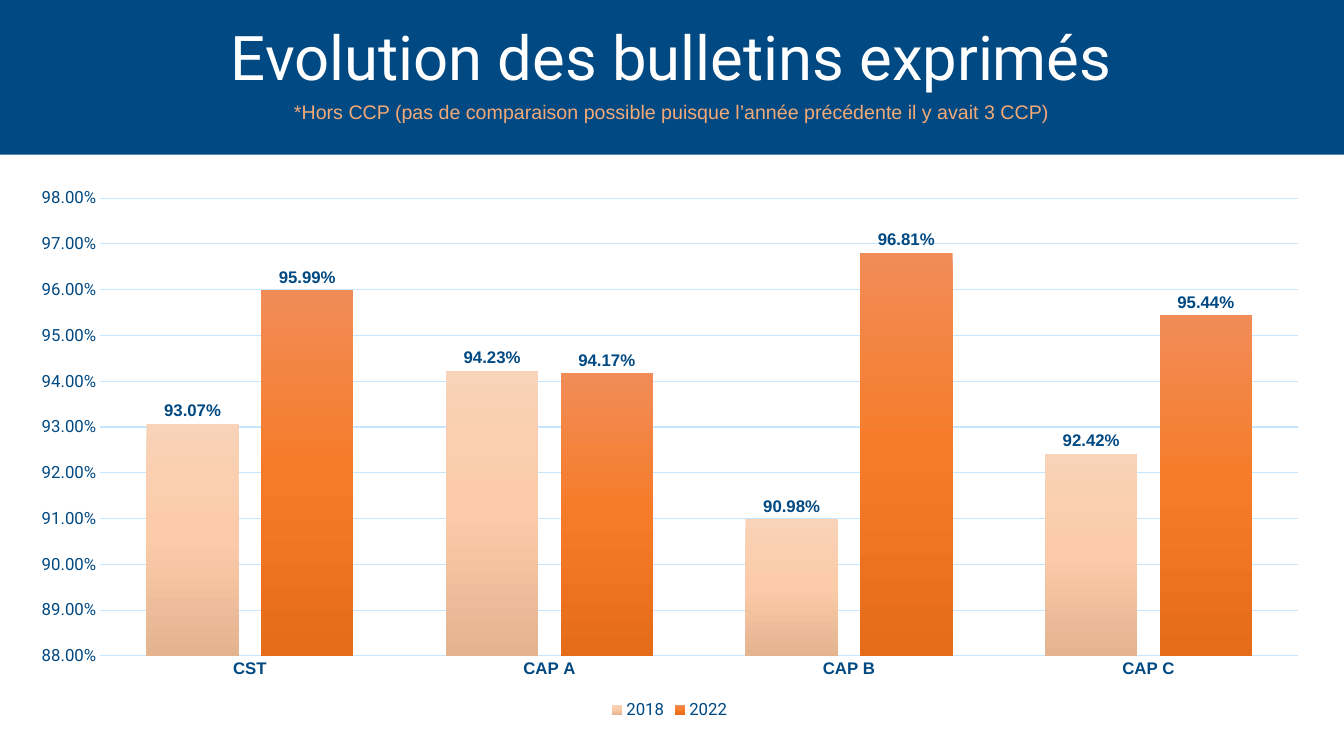
from copy import deepcopy

from lxml.etree import SubElement
from pptx import Presentation
from pptx.chart.data import CategoryChartData
from pptx.dml.color import RGBColor
from pptx.enum.chart import XL_CHART_TYPE, XL_LABEL_POSITION, XL_LEGEND_POSITION, XL_TICK_MARK
from pptx.enum.shapes import MSO_SHAPE
from pptx.enum.text import MSO_ANCHOR, MSO_AUTO_SIZE, PP_ALIGN
from pptx.oxml.ns import qn
from pptx.util import Cm, Pt

COLORS = {"navy": "004982", "white": "FFFFFF", "peach": "F4AA77", "grid": "C6E6FF"}
TURNOUT = {
    "2018": ((0.9307, 0.9423, 0.9098, 0.9242), ("F9D3B8", "FBCAA8", "E4B390")),
    "2022": ((0.9599, 0.9417, 0.9681, 0.9544), ("F18C57", "F67B28", "E56C19")),
}


def set_font(font, name="Roboto", size=12, color="navy", bold=False):
    font.name, font.size, font.bold = name, Pt(size), bold
    font.color.rgb = RGBColor.from_string(COLORS[color])


def write(para, text, space_before=0, **style):
    para.alignment = PP_ALIGN.CENTER
    para.line_spacing = 1.0
    para.space_before = Pt(space_before)
    span = para.add_run()
    span.text = text
    set_font(span.font, **style)


deck = Presentation()
deck.slide_width, deck.slide_height = Cm(33.87), Cm(19.05)
page = deck.slides.add_slide(deck.slide_layouts[5])

# Title over a navy band
title = page.shapes.title
title.left, title.top, title.width, title.height = Cm(2.33), Cm(0.38), Cm(29.2), Cm(3.4)
band = page.shapes.add_shape(MSO_SHAPE.RECTANGLE, 0, 0, deck.slide_width, Cm(3.9))
band.shadow.inherit = False
band.fill.solid()
band.fill.fore_color.rgb = RGBColor.from_string(COLORS["navy"])
band.line.fill.background()
title.element.addprevious(band.element)

frame = title.text_frame
frame.auto_size = MSO_AUTO_SIZE.NONE
frame.word_wrap = True
frame.vertical_anchor = MSO_ANCHOR.TOP
frame.margin_top = Cm(0.1)
write(frame.paragraphs[0], "Evolution des bulletins exprimés", size=44, color="white")
write(frame.add_paragraph(),
      "*Hors CCP (pas de comparaison possible puisque l’année précédente il y avait 3 CCP)",
      space_before=5, name="Arial", size=14, color="peach")

# Column chart
data = CategoryChartData(number_format="0.00%")
data.categories = ["CST", "CAP A", "CAP B", "CAP C"]
for year, (shares, _) in TURNOUT.items():
    data.add_series(year, shares)
chart = page.shapes.add_chart(XL_CHART_TYPE.COLUMN_CLUSTERED,
                              Cm(0.38), Cm(4.47), Cm(33), Cm(13.77), data).chart
set_font(chart.font, size=10)
chart.has_title = False
chart.has_legend = True
chart.legend.position = XL_LEGEND_POSITION.BOTTOM
chart.legend.include_in_layout = False
set_font(chart.legend.font)

# Axes
categories, values = chart.category_axis, chart.value_axis
for axis in (categories, values):
    axis.major_tick_mark = axis.minor_tick_mark = XL_TICK_MARK.NONE
set_font(categories.tick_labels.font, name="Arial", bold=True)
set_font(values.tick_labels.font)
values.minimum_scale, values.maximum_scale, values.major_unit = 0.88, 0.98, 0.01
values.tick_labels.number_format = "0.00%"
values.tick_labels.number_format_is_linked = False
values.format.line.fill.background()
for line in (categories.format.line, values.major_gridlines.format.line):
    line.width = Pt(0.75)
    line.color.rgb = RGBColor.from_string(COLORS["grid"])

# Columns with three-stop gradients and value labels
plot = chart.plots[0]
plot.gap_width, plot.overlap = 100, -24
plot.vary_by_categories = False
for series, (_, shades) in zip(plot.series, TURNOUT.values()):
    fill = series.format.fill
    fill.gradient()
    fill.gradient_angle = 270
    stops = series.format.fill.gradient_stops
    stop_list = next(series._element.iter(qn("a:gsLst")))
    stop_list.insert(1, deepcopy(stop_list[0]))
    for stop, position, shade in zip(fill.gradient_stops, (0, 0.5, 1), shades):
        stop.position = position
        stop.color.rgb = RGBColor.from_string(shade)
    labels = series.data_labels
    labels.show_value = True
    labels.position = XL_LABEL_POSITION.OUTSIDE_END
    labels.number_format = "0.00%"
    labels.number_format_is_linked = False
    set_font(labels.font, name="Arial", bold=True)

# Plot area position, as shares of the chart
plot_area = next(chart.element.iter(qn("c:plotArea")))
for old_layout in plot_area.findall(qn("c:layout")):
    plot_area.remove(old_layout)
layout = SubElement(plot_area, qn("c:layout"))
plot_area.insert(0, layout)
manual = SubElement(layout, qn("c:manualLayout"))
settings = {"layoutTarget": "inner", "xMode": "edge", "yMode": "edge",
            "x": 0.065, "y": 0.038, "w": 0.915, "h": 0.838}
for key, setting in settings.items():
    SubElement(manual, qn(f"c:{key}")).set("val", str(setting))

deck.save("out.pptx")
